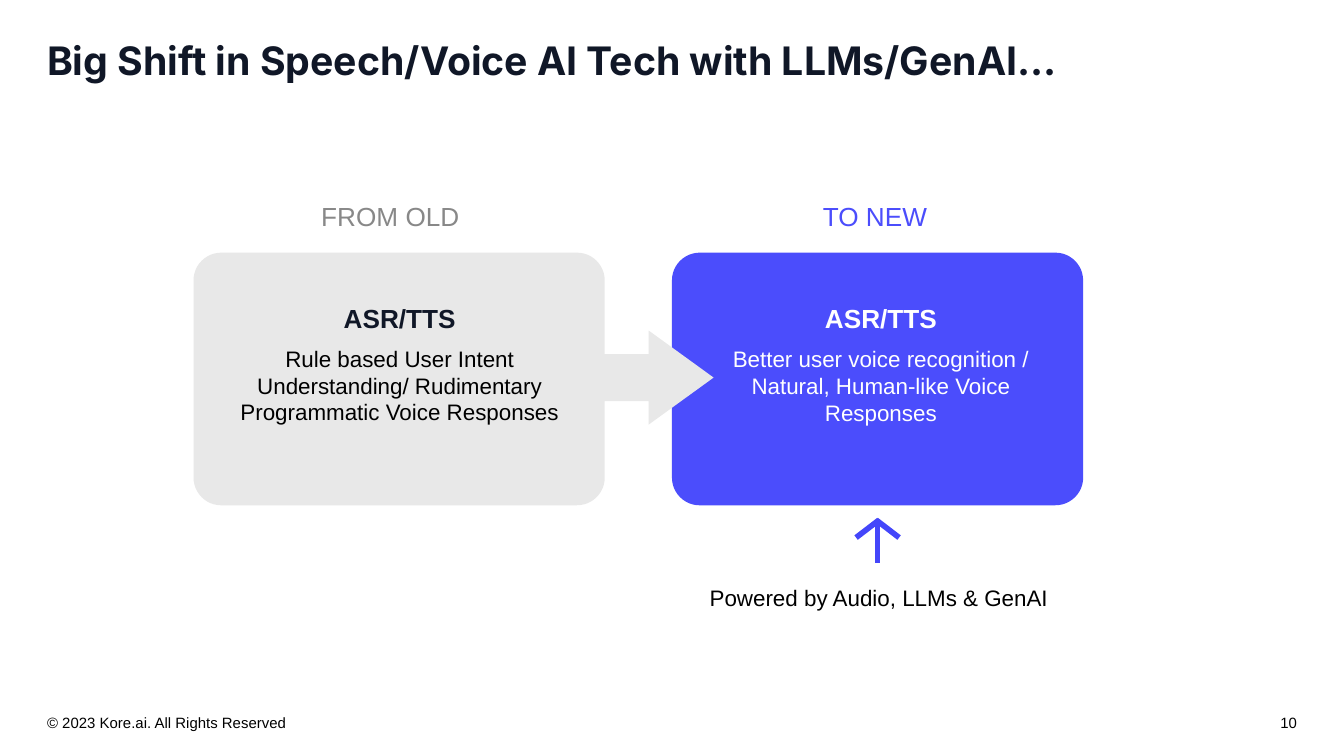
from lxml import etree
from pptx import Presentation
from pptx.dml.color import RGBColor
from pptx.enum.shapes import MSO_CONNECTOR, MSO_SHAPE
from pptx.enum.text import MSO_ANCHOR, PP_ALIGN
from pptx.oxml.ns import qn
from pptx.util import Inches, Pt

LEFT, CENTER, RIGHT = PP_ALIGN.LEFT, PP_ALIGN.CENTER, PP_ALIGN.RIGHT
TOP, BOTTOM = MSO_ANCHOR.TOP, MSO_ANCHOR.BOTTOM
ROUNDED, RIGHT_ARROW = MSO_SHAPE.ROUNDED_RECTANGLE, MSO_SHAPE.RIGHT_ARROW
STRAIGHT = MSO_CONNECTOR.STRAIGHT

SLIDE_WIDTH = 10
SLIDE_HEIGHT = SLIDE_WIDTH * 9 / 16

COLORS = {
    "navy": "101727", "black": "000000", "white": "FFFFFF", "gray": "888888",
    "light": "E8E8E8", "blue": "4B4DFC", "arrow": "4446FA",
}

TITLE = "Big Shift in Speech/Voice AI Tech with LLMs/GenAI..."
CARDS = [
    {"left": 1.44, "fill": "light", "label": "FROM OLD", "label_box": (2.12, 1.39, 1.57, 0.38),
     "label_color": "gray", "text_box": (1.66, 2.2, 2.63, 1.03),
     "heading": "ASR/TTS", "heading_color": "navy", "body_color": "black",
     "body": "Rule based User Intent Understanding/ Rudimentary Programmatic Voice Responses"},
    {"left": 5, "fill": "blue", "label": "TO NEW", "label_box": (5.85, 1.39, 1.32, 0.38),
     "label_color": "blue", "text_box": (5.24, 2.2, 2.63, 1.31),
     "heading": "ASR/TTS", "heading_color": "white", "body_color": "white",
     "body": "Better user voice recognition / Natural, Human-like Voice Responses"},
]
CARD_TOP, CARD_WIDTH, CARD_HEIGHT = 1.88, 3.06, 1.88
POWERED_BY = "Powered by Audio, LLMs & GenAI"
FOOTERS = [
    ("© 2023 Kore.ai. All Rights Reserved", (0.28, 5.26, 3.09, 0.22), LEFT),
    ("10", (8.97, 5.26, 0.75, 0.22), RIGHT),
]
ARROW_STROKES = [
    ((6.53, 3.87), (6.53, 4.19)),
    ((6.52, 3.87), (6.69, 4)),
    ((6.54, 3.87), (6.37, 4)),
]


def color(name):
    return RGBColor.from_string(COLORS[name])


def set_frame(frame, horizontal, vertical, anchor):
    frame.word_wrap = True
    frame.margin_left = frame.margin_right = Inches(horizontal)
    frame.margin_top = frame.margin_bottom = Inches(vertical)
    frame.vertical_anchor = anchor


def write(paragraph, text, size, color_name, align=CENTER, bold=False, font="Arial"):
    paragraph.text = text
    paragraph.alignment = align
    for run in paragraph.runs:
        run.font.name = font
        run.font.size = Pt(size)
        run.font.bold = bold
        run.font.color.rgb = color(color_name)


def add_text_frame(slide, box, horizontal=0.1, vertical=0.05, anchor=TOP):
    frame = slide.shapes.add_textbox(*map(Inches, box)).text_frame
    set_frame(frame, horizontal, vertical, anchor)
    return frame


def add_block(slide, kind, box, fill, adjustments):
    shape = slide.shapes.add_shape(kind, *map(Inches, box))
    shape.shadow.inherit = False
    shape.fill.solid()
    shape.fill.fore_color.rgb = color(fill)
    shape.line.fill.background()
    for index, value in enumerate(adjustments):
        shape.adjustments[index] = value


def add_stroke(slide, start, end):
    line = slide.shapes.add_connector(STRAIGHT, *map(Inches, start + end))
    line.line.color.rgb = color("arrow")
    line.line.width = Pt(3)
    etree.SubElement(line._element.spPr, qn("a:effectLst"))


def main():
    presentation = Presentation()
    presentation.slide_width = Inches(SLIDE_WIDTH)
    presentation.slide_height = Inches(SLIDE_HEIGHT)
    slide = presentation.slides.add_slide(presentation.slide_layouts[5])

    title = slide.shapes.title
    title.left, title.top, title.width, title.height = map(Inches, (0.28, 0.27, 8.6, 0.48))
    set_frame(title.text_frame, 0.07, 0.04, TOP)
    heading = title.text_frame.paragraphs[0]
    write(heading, TITLE, 21, "navy", LEFT, True, "Inter")
    heading.line_spacing = 0.9

    for card in CARDS:
        box = (card["left"], CARD_TOP, CARD_WIDTH, CARD_HEIGHT)
        add_block(slide, ROUNDED, box, card["fill"], [0.11])
        label = add_text_frame(slide, card["label_box"], vertical=0.1)
        write(label.paragraphs[0], card["label"], 14, card["label_color"])
        frame = add_text_frame(slide, card["text_box"])
        write(frame.paragraphs[0], card["heading"], 14, card["heading_color"], bold=True)
        body = frame.add_paragraph()
        write(body, card["body"], 12, card["body_color"])
        body.space_before = Pt(6)

    add_block(slide, RIGHT_ARROW, (4.41, 2.46, 0.9, 0.7), "light", [0.5, 0.69])
    for start, end in ARROW_STROKES:
        add_stroke(slide, start, end)

    caption = add_text_frame(slide, (5.1, 4.3, 2.88, 0.3))
    write(caption.paragraphs[0], POWERED_BY, 12, "black")
    for text, box, align in FOOTERS:
        footer = add_text_frame(slide, box, 0.07, 0.04, BOTTOM)
        write(footer.paragraphs[0], text, 8, "black", align)

    presentation.save("out.pptx")


if __name__ == "__main__":
    main()
